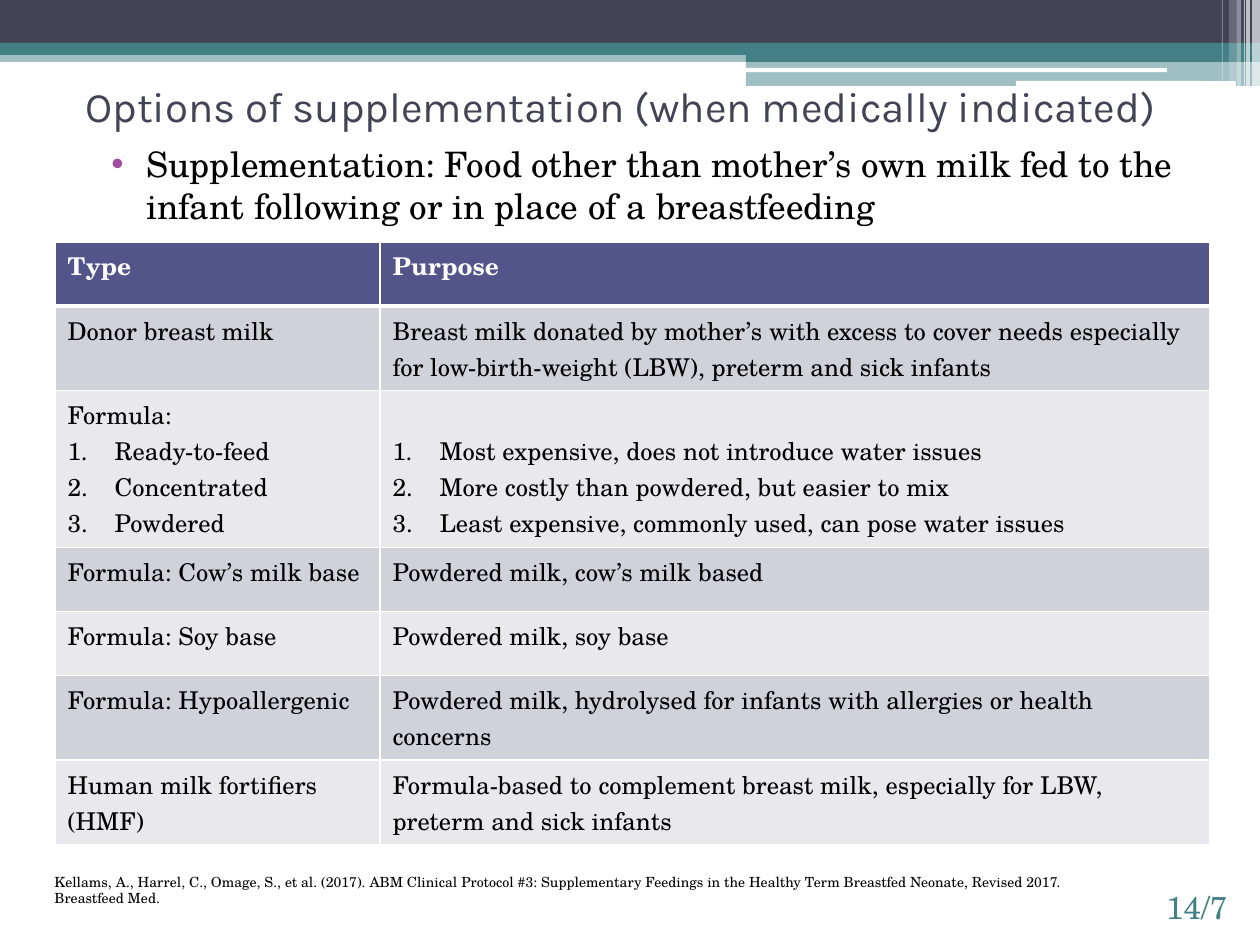
from lxml import etree
from pptx import Presentation
from pptx.dml.color import RGBColor
from pptx.enum.shapes import MSO_SHAPE
from pptx.enum.text import MSO_ANCHOR, MSO_AUTO_SIZE, PP_ALIGN
from pptx.oxml.ns import qn
from pptx.util import Emu, Pt

RECT, ROUND = MSO_SHAPE.RECTANGLE, MSO_SHAPE.ROUNDED_RECTANGLE
TOP, MIDDLE, BOTTOM = MSO_ANCHOR.TOP, MSO_ANCHOR.MIDDLE, MSO_ANCHOR.BOTTOM
LEFT, RIGHT = PP_ALIGN.LEFT, PP_ALIGN.RIGHT
FIXED, GROW = MSO_AUTO_SIZE.NONE, MSO_AUTO_SIZE.SHAPE_TO_FIT_TEXT
SLATE, TEAL, WHITE, BLACK = "424456", "438086", "FFFFFF", "000000"
INDIGO, BAND_DARK, BAND_LIGHT, PURPLE = "53548A", "D1D1DA", "E9E9ED", "A04DA3"
SERIF, SANS = "TeX Gyre Schola", "Karla"


def px(length):
    return Emu(round(length * 914400 / 126))


def rgb(value):
    return RGBColor.from_string(value)


def add_xml(parent, tag, **attributes):
    return etree.SubElement(parent, qn(tag), attributes)


class SlideBuilder:
    def __init__(self, slide):
        self.slide = slide
        self.table_format = {"size": Pt(14), "name": SERIF}

    def bar(self, x, y, w, h, color, opacity=100, shape=RECT):
        bar = self.slide.shapes.add_shape(shape, px(x), px(y), px(w), px(h))
        bar.shadow.inherit = False
        bar.fill.solid()
        bar.fill.fore_color.rgb = rgb(color)
        bar.line.fill.background()
        if opacity < 100:
            solid = bar.fill._xPr.find(qn("a:solidFill"))
            add_xml(solid[0], "a:alpha", val=str(opacity * 1000))

    def add_run(self, paragraph, text, color, font_format):
        run = paragraph.add_run()
        run.text = text
        for key, value in font_format.items():
            setattr(run.font, key, value)
        run.font.color.rgb = rgb(color)

    def text(self, x, y, w, h, text, size, color, font=SERIF,
             anchor=TOP, align=LEFT, auto_size=FIXED):
        box = self.slide.shapes.add_textbox(px(x), px(y), px(w), px(h))
        frame_format = {"word_wrap": True, "vertical_anchor": anchor, "auto_size": auto_size}
        for key, value in frame_format.items():
            setattr(box.text_frame, key, value)
        paragraph = box.text_frame.paragraphs[0]
        paragraph.alignment = align
        self.add_run(paragraph, text, color, {"size": Pt(size), "name": font})
        return paragraph

    def hang(self, paragraph, margin, indent):
        properties = paragraph._p.get_or_add_pPr()
        properties.set("marL", str(px(margin)))
        properties.set("indent", str(px(-indent)))
        return properties

    def bullet(self, paragraph, color):
        paragraph.space_before = Pt(3)
        properties = self.hang(paragraph, 50, 35)
        add_xml(add_xml(properties, "a:buClr"), "a:srgbClr", val=color)
        add_xml(properties, "a:buFont", typeface="Arial")
        add_xml(properties, "a:buChar", char="•")

    def borders(self, cell, row):
        widths = {"L": 1, "R": 1, "T": 3 if row == 1 else 1, "B": 3 if row == 0 else 1}
        for side, width in widths.items():
            line = add_xml(cell._tc.get_or_add_tcPr(), f"a:ln{side}", w=str(Pt(width)))
            add_xml(add_xml(line, "a:solidFill"), "a:srgbClr", val=WHITE)

    def cell(self, cell, row, heading, items):
        self.borders(cell, row)
        cell.fill.solid()
        band = BAND_DARK if row % 2 else BAND_LIGHT
        cell.fill.fore_color.rgb = rgb(band if row else INDIGO)
        # A list without a heading sits level with the list beside it
        cell.vertical_anchor = TOP if heading else BOTTOM
        lines = ([heading] if heading else []) + items
        for index, line in enumerate(lines):
            frame = cell.text_frame
            paragraph = frame.add_paragraph() if index else frame.paragraphs[0]
            paragraph.line_spacing = Pt(20.57)
            if line in items:
                properties = self.hang(paragraph, 47, 47)
                add_xml(properties, "a:buFont", typeface="+mj-lt")
                add_xml(properties, "a:buAutoNum", type="arabicPeriod")
            self.add_run(paragraph, line, BLACK if row else WHITE,
                         {**self.table_format, "bold": row == 0})

    def table(self, x, y, widths, heights, rows):
        table = self.slide.shapes.add_table(
            len(rows), len(widths), px(x), px(y), px(sum(widths)), px(sum(heights))).table
        table.horz_banding = False
        for column, width in zip(table.columns, widths):
            column.width = px(width)
        for index, (height, contents) in enumerate(zip(heights, rows)):
            table.rows[index].height = px(height)
            for column, (heading, *items) in enumerate(contents):
                self.cell(table.cell(index, column), index, heading, items)


def main():
    prs = Presentation()
    prs.slide_width, prs.slide_height = px(1260), px(945)
    page = SlideBuilder(prs.slides.add_slide(prs.slide_layouts[6]))

    # Banner across the top
    page.bar(0, 50, 1260, 12, TEAL, 50)
    page.bar(0, 0, 1260, 43, SLATE)
    page.bar(0, 43, 1260, 12, TEAL)
    page.bar(746, 49, 514, 13, TEAL)
    page.bar(746, 61, 514, 25, TEAL, 50)
    page.bar(745, 68, 422, 4, WHITE, shape=ROUND)
    page.bar(1016, 81, 220, 5, WHITE, shape=ROUND)

    # Fading stripes at the right end
    for x, width, height, opacity in [
        (1252, 8, 86, 65), (1246, 4, 86, 65), (1244, 1, 86, 60),
        (1237, 4, 86, 40), (1229, 8, 81, 20), (1222, 1, 81, 30),
    ]:
        page.bar(x, 0, width, height, WHITE, opacity)

    # Title and definition
    page.text(73, 32, 1134, 147, "Options of supplementation (when medically indicated)",
              24, SLATE, SANS, MIDDLE)
    definition = page.text(
        84, 136, 1134, 770,
        "Supplementation: Food other than mother’s own milk fed to the infant "
        "following or in place of a breastfeeding", 20, BLACK)
    page.bullet(definition, PURPLE)

    # Supplement types: each cell is a heading followed by numbered items
    page.table(55, 242, [325, 830], [64, 81, 146, 64, 64, 81, 81], [
        [["Type"], ["Purpose"]],
        [["Donor breast milk"],
         ["Breast milk donated by mother’s with excess to cover needs especially "
          "for low-birth-weight (LBW), preterm and sick infants"]],
        [["Formula:", "Ready-to-feed", "Concentrated", "Powdered"],
         [None, "Most expensive, does not introduce water issues",
          "More costly than powdered, but easier to mix",
          "Least expensive, commonly used, can pose water issues"]],
        [["Formula: Cow’s milk base"], ["Powdered milk, cow’s milk based"]],
        [["Formula: Soy base"], ["Powdered milk, soy base"]],
        [["Formula: Hypoallergenic"],
         ["Powdered milk, hydrolysed for infants with allergies or health concerns"]],
        [["Human milk fortifiers (HMF)"],
         ["Formula-based to complement breast milk, especially for LBW, "
          "preterm and sick infants"]],
    ])

    # Page number and reference
    page.text(1061, 882, 179, 63, "14/7", 18, TEAL, align=RIGHT)
    page.text(
        42, 867, 1089, 30,
        "Kellams, A., Harrel, C., Omage, S., et al. (2017). ABM Clinical Protocol #3: "
        "Supplementary Feedings in the Healthy Term Breastfed Neonate, Revised 2017. "
        "Breastfeed Med.", 8, BLACK, auto_size=GROW)

    prs.save("out.pptx")


if __name__ == "__main__":
    main()
